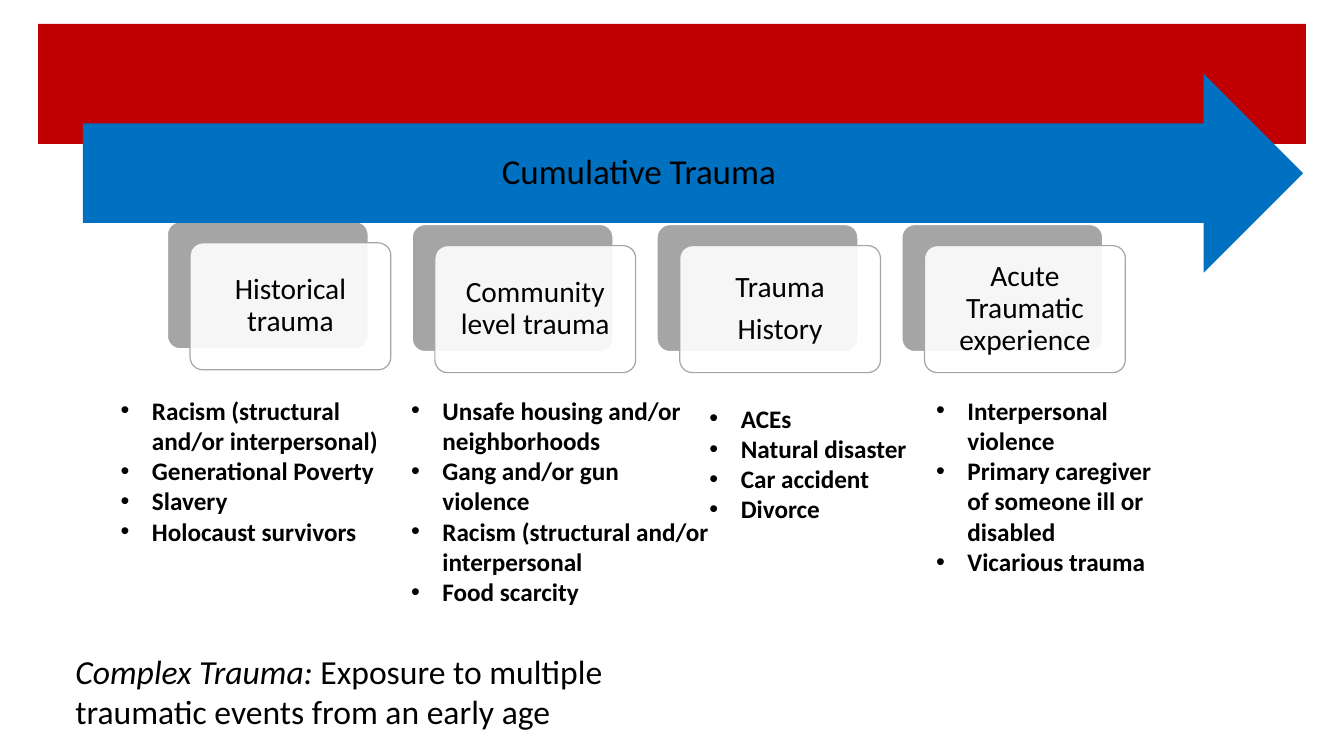
from lxml.etree import SubElement
from pptx import Presentation
from pptx.dml.color import RGBColor
from pptx.enum.shapes import MSO_SHAPE
from pptx.enum.text import MSO_ANCHOR, MSO_AUTO_SIZE, PP_ALIGN
from pptx.oxml.ns import qn
from pptx.util import Cm, Pt

RED = RGBColor(0xC0, 0x00, 0x00)
BLUE = RGBColor(0x00, 0x70, 0xC0)
GRAY = RGBColor(0xA5, 0xA5, 0xA5)
WHITE = RGBColor(0xFF, 0xFF, 0xFF)
BLACK = RGBColor(0x00, 0x00, 0x00)

# Content: card lines, card top, list box (left, top, width, height), list items
ARROW_TEXT = "Cumulative Trauma"
COLUMNS = [
    (["Historical trauma"], 5.59, (2.79, 9.83, 7.82, 4.88),
     ["Racism (structural and/or interpersonal)", "Generational Poverty",
      "Slavery", "Holocaust survivors"]),
    (["Community level trauma"], 5.66, (10.11, 9.83, 8.08, 7.19),
     ["Unsafe housing and/or neighborhoods", "Gang and/or gun violence",
      "Racism (structural and/or interpersonal", "Food scarcity"]),
    (["Trauma", "History"], 5.66, (17.63, 10.03, 5.74, 3.33),
     ["ACEs", "Natural disaster", "Car accident", "Divorce"]),
    (["Acute Traumatic experience"], 5.66, (23.34, 9.83, 6.35, 4.88),
     ["Interpersonal violence", "Primary caregiver of someone ill or disabled",
      "Vicarious trauma"]),
]
DEFINITION = [("Complex Trauma: ", True),
              ("Exposure to multiple traumatic events from an early age", False)]

# Layout in centimetres
CARD_LEFT, CARD_PITCH = 4.22, 6.17
CARD_SIZE = (5.06, 3.2)
FRONT_SHIFT = (0.57, 0.53)
BULLET_INDENT = 0.79

CENTERED = {"alignment": PP_ALIGN.CENTER, "line_spacing": 0.9}


def set_values(target, values):
    for name, value in values.items():
        setattr(target, name, value)


def set_font(target, size, **extra):
    set_values(target.font, {"name": "Calibri", "size": Pt(size), **extra})
    target.font.color.rgb = BLACK


def add_block(kind, box, fill, line=None):
    shape = slide.shapes.add_shape(kind, *map(Cm, box))
    shape.shadow.inherit = False
    shape.fill.solid()
    shape.fill.fore_color.rgb = fill
    if line is None:
        shape.line.fill.background()
    else:
        shape.line.color.rgb = line
        shape.line.width = Pt(0.85)
    return shape


def add_card(box, fill, line):
    card = add_block(MSO_SHAPE.ROUNDED_RECTANGLE, box, fill, line)
    card.adjustments[0] = 0.1
    return card


def add_text_box(box):
    frame = slide.shapes.add_textbox(*map(Cm, box)).text_frame
    set_values(frame, {"word_wrap": True,
                       "auto_size": MSO_AUTO_SIZE.SHAPE_TO_FIT_TEXT})
    return frame


def fill_lines(frame, lines):
    frame.text = "\n".join(lines)
    return frame.paragraphs


def write_centered(shape, lines, size, margins):
    names = ("margin_left", "margin_top", "margin_right", "margin_bottom")
    frame = shape.text_frame
    set_values(frame, dict(zip(names, map(Cm, margins))))
    set_values(frame, {"word_wrap": True, "vertical_anchor": MSO_ANCHOR.MIDDLE})
    for paragraph in fill_lines(frame, lines):
        set_values(paragraph, {**CENTERED, "space_after": Pt(size * 0.35)})
        set_font(paragraph, size)


def add_bullet(paragraph):
    properties = paragraph._p.get_or_add_pPr()
    properties.set("marL", str(Cm(BULLET_INDENT)))
    properties.set("indent", str(-Cm(BULLET_INDENT)))
    SubElement(properties, qn("a:buFont")).set("typeface", "Arial")
    SubElement(properties, qn("a:buChar")).set("char", "•")


presentation = Presentation()
presentation.slide_width, presentation.slide_height = Cm(33.87), Cm(19.05)
slide = presentation.slides.add_slide(presentation.slide_layouts[6])

# Red band
add_block(MSO_SHAPE.RECTANGLE, (0.96, 0.6, 31.95, 3.03), RED)

# Cards: gray back, translucent white front with the heading
for index, (heading, top, _, _) in enumerate(COLUMNS):
    left = CARD_LEFT + index * CARD_PITCH
    add_card((left, top, *CARD_SIZE), GRAY, WHITE)
    front = add_card((left + FRONT_SHIFT[0], top + FRONT_SHIFT[1], *CARD_SIZE),
                     WHITE, GRAY)
    color = front.fill._xPr.find(qn("a:solidFill"))[0]
    SubElement(color, qn("a:alpha")).set("val", "90000")
    write_centered(front, heading, 21, (0.2, 0.3, 0.2, 0.3))

# Bulleted lists
for _, _, box, items in COLUMNS:
    for paragraph in fill_lines(add_text_box(box), items):
        add_bullet(paragraph)
        set_font(paragraph, 18, bold=True)

# Arrow
arrow = add_block(MSO_SHAPE.RIGHT_ARROW, (2.09, 1.86, 30.75, 5.01), BLUE)
write_centered(arrow, [ARROW_TEXT], 25, (0.48, 0, 1.96, 0))

# Definition
paragraph = add_text_box((1.65, 16.28, 16.94, 2.31)).paragraphs[0]
for text, italic in DEFINITION:
    run = paragraph.add_run()
    run.text = text
    set_font(run, 24, italic=italic)

presentation.save("out.pptx")
